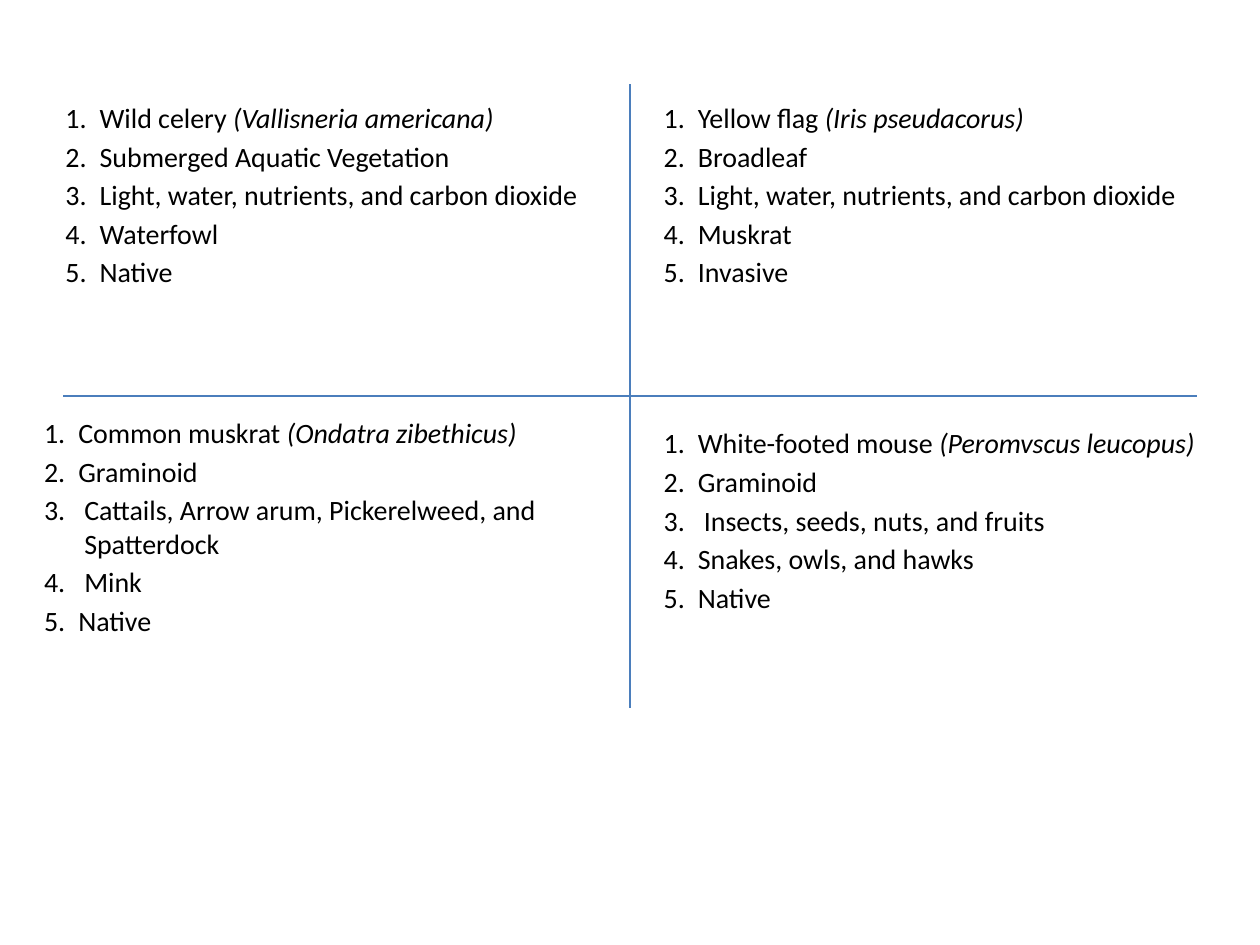
"""Build a slide of four numbered species answers divided by a cross."""
from dataclasses import dataclass
from typing import NamedTuple

from lxml.etree import SubElement
from pptx import Presentation
from pptx.dml.color import RGBColor
from pptx.enum.shapes import MSO_CONNECTOR as Connector
from pptx.enum.text import MSO_AUTO_SIZE as AutoSize
from pptx.oxml.ns import qn
from pptx.util import Cm, Pt

COLORS = {"text": "000000", "divider": "4B7EBC"}
FONT = "Calibri"
HANG = 0.69
WIDE_HANG = 0.81


class Answer(NamedTuple):
    text: str
    latin: str = ""
    hang: float = HANG


class Divider(NamedTuple):
    x1: float
    y1: float
    x2: float
    y2: float


@dataclass
class Quadrant:
    left: float
    top: float
    width: float
    height: float
    answers: list[Answer]


NEEDS = Answer("Light, water, nutrients, and carbon dioxide")
DIVIDERS = [Divider(12.7, 1.7, 12.7, 14.27), Divider(1.27, 7.98, 24.13, 7.98)]
QUADRANTS = [
    Quadrant(1.07, 1.9, 11.07, 4.22, [
        Answer("Wild celery ", "(Vallisneria americana)"),
        Answer("Submerged Aquatic Vegetation"),
        NEEDS,
        Answer("Waterfowl"),
        Answer("Native"),
    ]),
    Quadrant(13.13, 1.9, 11.07, 4.22, [
        Answer("Yellow flag ", "(Iris pseudacorus)"),
        Answer("Broadleaf"),
        NEEDS,
        Answer("Muskrat"),
        Answer("Invasive"),
    ]),
    Quadrant(0.64, 8.25, 11.86, 4.9, [
        Answer("Common muskrat ", "(Ondatra zibethicus)"),
        Answer("Graminoid"),
        Answer("Cattails, Arrow arum, Pickerelweed, and Spatterdock", hang=WIDE_HANG),
        Answer("Mink", hang=WIDE_HANG),
        Answer("Native"),
    ]),
    Quadrant(13.13, 8.46, 11.61, 4.22, [
        Answer("White-footed mouse ", "(Peromvscus leucopus)"),
        Answer("Graminoid"),
        Answer("Insects, seeds, nuts, and fruits", hang=WIDE_HANG),
        Answer("Snakes, owls, and hawks"),
        Answer("Native"),
    ]),
]


def add_divider(page, divider: Divider) -> None:
    """Draw one thin dividing line without a shadow."""
    line = page.shapes.add_connector(Connector.STRAIGHT, *map(Cm, divider))
    line.line.color.rgb = RGBColor.from_string(COLORS["divider"])
    line.line.width = Pt(0.75)
    SubElement(line._element.spPr, qn("a:effectLst"))


def add_span(para, text: str, italic: bool = False) -> None:
    """Append one styled run to a paragraph."""
    span = para.add_run()
    span.text = text
    span.font.name = FONT
    span.font.size = Pt(16)
    span.font.italic = italic
    span.font.color.rgb = RGBColor.from_string(COLORS["text"])


def add_quadrant(page, quadrant: Quadrant) -> None:
    """Write the numbered answers of one quadrant with hanging indents."""
    box = page.shapes.add_textbox(Cm(quadrant.left), Cm(quadrant.top),
                                  Cm(quadrant.width), Cm(quadrant.height))
    frame = box.text_frame
    frame.word_wrap = True
    frame.auto_size = AutoSize.SHAPE_TO_FIT_TEXT
    for number, answer in enumerate(quadrant.answers, start=1):
        para = frame.paragraphs[0] if number == 1 else frame.add_paragraph()
        para.space_before = Pt(2.9)
        properties = para._p.get_or_add_pPr()
        properties.set("marL", str(Cm(answer.hang)))
        properties.set("indent", str(-Cm(answer.hang)))
        add_span(para, f"{number}.\t{answer.text}")
        if answer.latin:
            add_span(para, answer.latin, italic=True)


def main() -> None:
    """Assemble and save the deck."""
    deck = Presentation()
    deck.slide_width, deck.slide_height = Cm(25.4), Cm(19.05)
    page = deck.slides.add_slide(deck.slide_layouts[6])
    for divider in DIVIDERS:
        add_divider(page, divider)
    for quadrant in QUADRANTS:
        add_quadrant(page, quadrant)
    deck.save("out.pptx")


if __name__ == "__main__":
    main()
